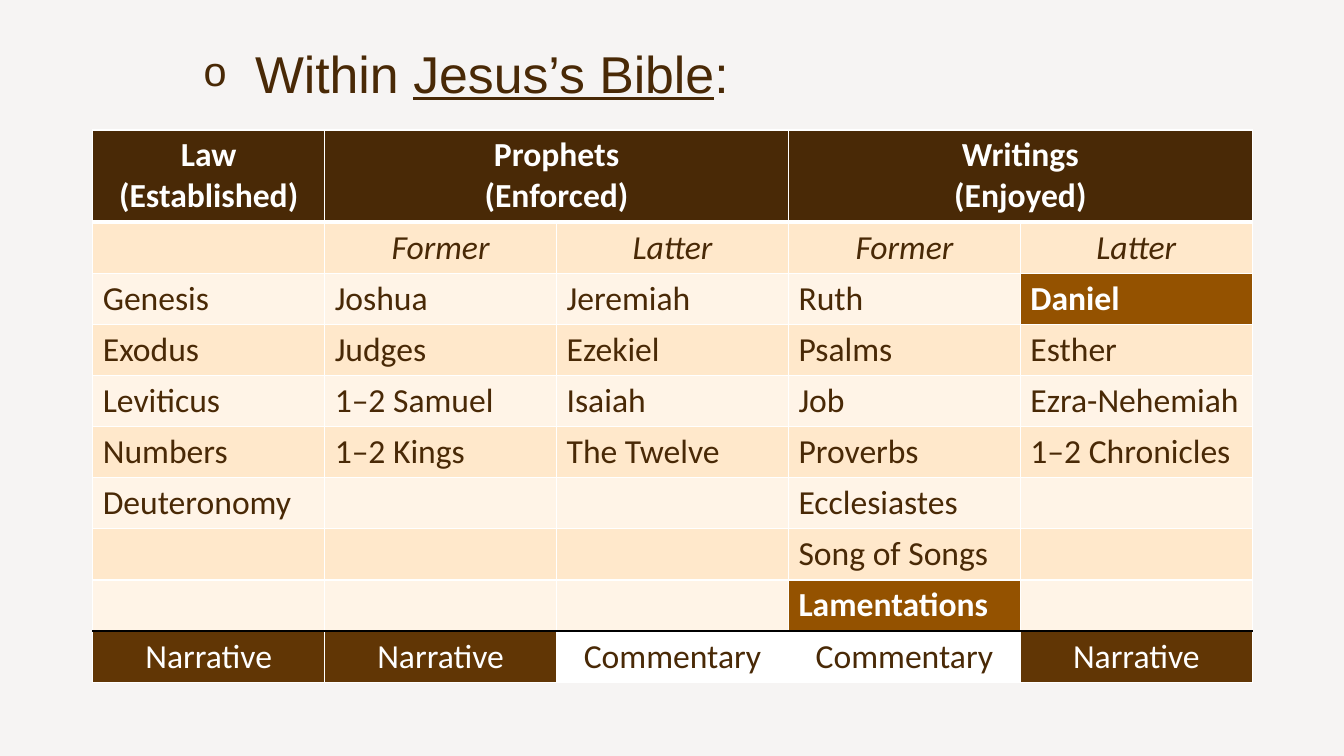
from lxml.etree import SubElement
from pptx import Presentation
from pptx.dml.color import RGBColor
from pptx.enum.text import MSO_ANCHOR, MSO_AUTO_SIZE, PP_ALIGN
from pptx.oxml.ns import qn
from pptx.util import Inches, Pt

BROWN, MID_BROWN, ACCENT = "492906", "613605", "945200"
BAND_DARK, BAND_LIGHT, WHITE, BLACK = "FFE8CB", "FFF4E7", "FFFFFF", "000000"
BACKGROUND = "F6F4F3"

DIVISIONS = [  # first column, columns spanned, heading
    (0, 1, "Law\n(Established)"),
    (1, 2, "Prophets\n(Enforced)"),
    (3, 2, "Writings\n(Enjoyed)"),
]
SUBHEADINGS = ["", "Former", "Latter", "Former", "Latter"]
BOOKS = [  # one list per column
    ["Genesis", "Exodus", "Leviticus", "Numbers", "Deuteronomy"],
    ["Joshua", "Judges", "1–2 Samuel", "1–2 Kings"],
    ["Jeremiah", "Ezekiel", "Isaiah", "The Twelve"],
    ["Ruth", "Psalms", "Job", "Proverbs", "Ecclesiastes", "Song of Songs",
     "Lamentations"],
    ["Daniel", "Esther", "Ezra-Nehemiah", "1–2 Chronicles"],
]
HIGHLIGHTED = {"Daniel", "Lamentations"}
GENRES = ["Narrative", "Narrative", "Commentary", "Commentary", "Narrative"]

COLUMN_COUNT = len(BOOKS)
FIRST_BOOK_ROW = 2
GENRE_ROW = FIRST_BOOK_ROW + max(len(column) for column in BOOKS)
ROW_COUNT = GENRE_ROW + 1
ROW_LINES = {1: (WHITE, 3), GENRE_ROW: (BLACK, 1)}  # lines above these rows


def color(hex_value):
    return RGBColor.from_string(hex_value)


def set_attributes(target, values):
    for name, value in values.items():
        setattr(target, name, value)


def format_font(font, hex_value, **values):
    set_attributes(font, values)
    font.color.rgb = color(hex_value)


def add_bullet(paragraph, character, hex_value, percent):
    properties = paragraph._p.get_or_add_pPr()
    properties.set("marL", str(Inches(1.51)))
    properties.set("indent", str(Inches(-0.51)))
    bullet_color = SubElement(properties, qn("a:buClr"))
    SubElement(bullet_color, qn("a:srgbClr"), val=hex_value)
    SubElement(properties, qn("a:buSzPct"), val=str(percent * 1000))
    SubElement(properties, qn("a:buFont"), typeface="Arial")
    SubElement(properties, qn("a:buChar"), char=character)


def add_title(slide):
    title = slide.shapes.title
    set_attributes(title, {"left": Inches(0.92), "top": Inches(0.45),
                           "width": Inches(11.5), "height": Inches(0.65)})
    set_attributes(title.text_frame, {"word_wrap": True,
                                      "auto_size": MSO_AUTO_SIZE.NONE,
                                      "vertical_anchor": MSO_ANCHOR.MIDDLE})
    paragraph = title.text_frame.paragraphs[0]
    set_attributes(paragraph, {"alignment": PP_ALIGN.LEFT,
                               "line_spacing": 0.8, "space_before": Pt(5)})
    add_bullet(paragraph, "o", BROWN, 80)
    for text, underline in [("Within ", False), ("Jesus’s Bible", True), (":", False)]:
        run = paragraph.add_run()
        run.text = text
        format_font(run.font, BROWN, name="Arial", size=Pt(37), underline=underline)


def set_borders(cell, row):
    properties = cell._tc.get_or_add_tcPr()
    sides = [("L", (WHITE, 1)), ("R", (WHITE, 1)),
             ("T", ROW_LINES.get(row, (WHITE, 1))),
             ("B", ROW_LINES.get(row + 1, (WHITE, 1)))]
    for side, (hex_value, width) in sides:
        line = SubElement(properties, qn(f"a:ln{side}"), w=str(Pt(width)))
        fill = SubElement(line, qn("a:solidFill"))
        SubElement(fill, qn("a:srgbClr"), val=hex_value)


def fill_cell(cell, text, hex_fill, hex_text=BROWN, alignment=PP_ALIGN.LEFT, **style):
    cell.fill.solid()
    cell.fill.fore_color.rgb = color(hex_fill)
    if not text:
        return
    cell.text = text
    for paragraph in cell.text_frame.paragraphs:
        paragraph.alignment = alignment
        for run in paragraph.runs:
            format_font(run.font, hex_text, name="Calibri", size=Pt(24), **style)


def add_books_table(slide):
    table = slide.shapes.add_table(ROW_COUNT, COLUMN_COUNT, Inches(0.92), Inches(1.29),
                                   Inches(11.5), Inches(5.4)).table
    set_attributes(table, {"first_row": False, "horz_banding": False})
    for column in table.columns:
        column.width = Inches(2.3)
    for index, row in enumerate(table.rows):
        row.height = Inches(0.5 if index else 0.9)
        for cell in row.cells:
            set_borders(cell, index)

    # Divisions
    for first, span, heading in DIVISIONS:
        cell = table.cell(0, first)
        if span > 1:
            cell.merge(table.cell(0, first + span - 1))
        fill_cell(cell, heading, BROWN, WHITE, PP_ALIGN.CENTER, bold=True)

    for column in range(COLUMN_COUNT):
        # Subheading
        fill_cell(table.cell(1, column), SUBHEADINGS[column], BAND_DARK,
                  alignment=PP_ALIGN.CENTER, italic=True)

        # Books
        for row in range(FIRST_BOOK_ROW, GENRE_ROW):
            position = row - FIRST_BOOK_ROW
            book = BOOKS[column][position] if position < len(BOOKS[column]) else ""
            if book in HIGHLIGHTED:
                fill_cell(table.cell(row, column), book, ACCENT, WHITE, bold=True)
            else:
                band = BAND_DARK if row % 2 else BAND_LIGHT
                fill_cell(table.cell(row, column), book, band)

        # Genre
        genre = GENRES[column]
        colors = (MID_BROWN, WHITE) if genre == "Narrative" else (WHITE, BROWN)
        fill_cell(table.cell(GENRE_ROW, column), genre, *colors, PP_ALIGN.CENTER)


def main():
    presentation = Presentation()
    set_attributes(presentation, {"slide_width": Inches(13.33),
                                  "slide_height": Inches(7.5)})
    slide = presentation.slides.add_slide(presentation.slide_layouts[5])
    slide.background.fill.solid()
    slide.background.fill.fore_color.rgb = color(BACKGROUND)
    add_title(slide)
    add_books_table(slide)
    presentation.save("out.pptx")


if __name__ == "__main__":
    main()
